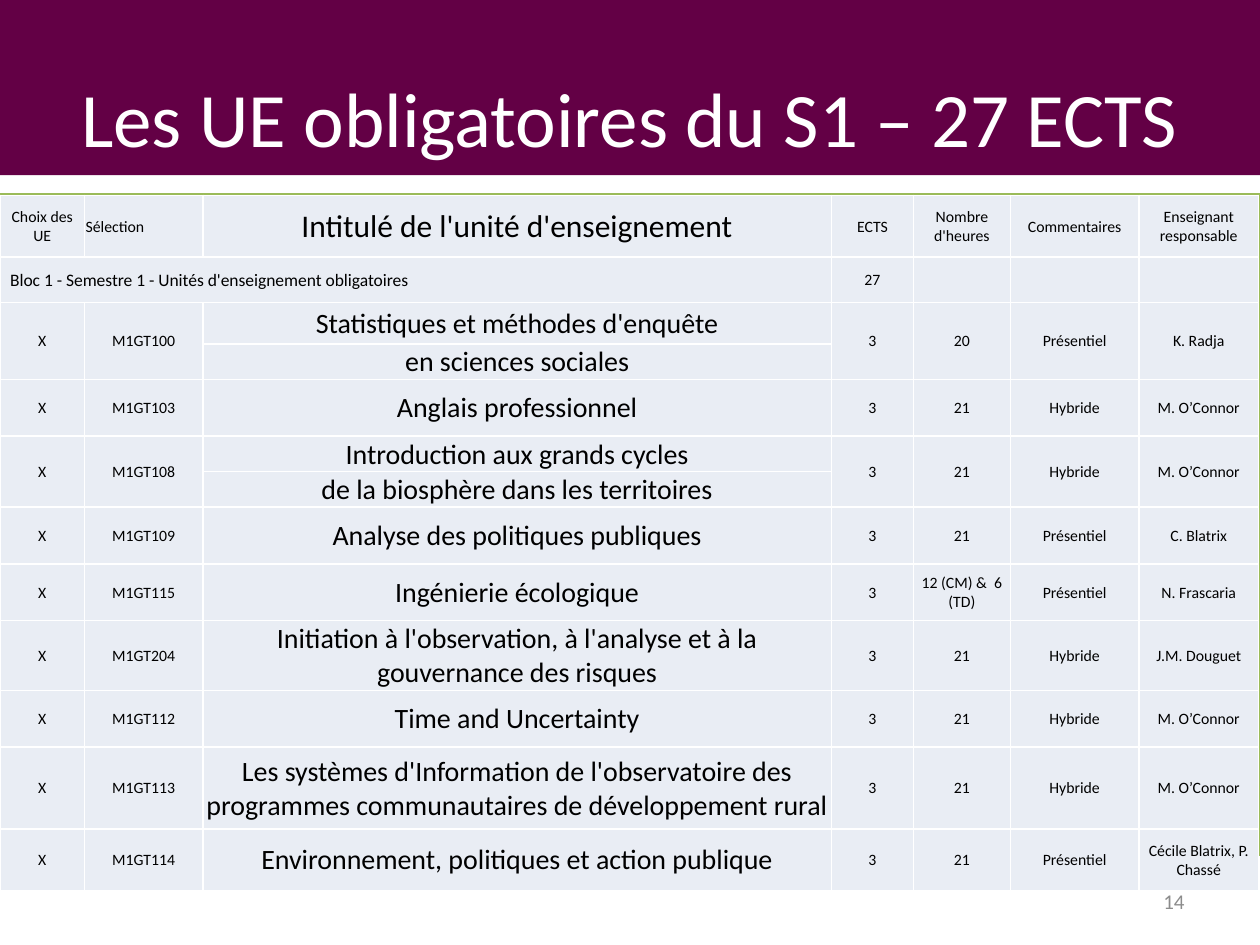
"""Build the slide listing the compulsory first-semester teaching units."""
from lxml.etree import SubElement
from pptx import Presentation
from pptx.dml.color import RGBColor
from pptx.enum.shapes import MSO_SHAPE
from pptx.enum.text import MSO_ANCHOR, PP_ALIGN
from pptx.oxml.ns import qn
from pptx.util import Inches, Pt

COLORS = {"banner": "630045", "green": "9BBB59", "cell": "E9EDF4",
          "white": "FFFFFF", "black": "000000", "number": "8C8C8C"}
FONT = "Calibri"
COLUMN_WIDTHS = [0.67, 0.94, 4.99, 0.65, 0.77, 1.02, 0.95]
ROW_HEIGHTS = [0.49, 0.36, 0.33, 0.22, 0.45, 0.22, 0.22,
               0.45, 0.45, 0.49, 0.45, 0.65, 0.49]
HEADERS = ["Choix des UE", "Sélection", "Intitulé de l'unité d'enseignement",
           "ECTS", "Nombre d'heures", "Commentaires", "Enseignant responsable"]
BLOCK = "Bloc 1 - Semestre 1 - Unités d'enseignement obligatoires"
COURSES = [
    ("M1GT100", ["Statistiques et méthodes d'enquête", "en sciences sociales"],
     "20", "Présentiel", "K. Radja"),
    ("M1GT103", ["Anglais professionnel"], "21", "Hybride", "M. O’Connor"),
    ("M1GT108", ["Introduction aux grands cycles", "de la biosphère dans les territoires"],
     "21", "Hybride", "M. O’Connor"),
    ("M1GT109", ["Analyse des politiques publiques"], "21", "Présentiel", "C. Blatrix"),
    ("M1GT115", ["Ingénierie écologique"], "12 (CM) &  6 (TD)", "Présentiel", "N. Frascaria"),
    ("M1GT204", ["Initiation à l'observation, à l'analyse et à la gouvernance des risques"],
     "21", "Hybride", "J.M. Douguet"),
    ("M1GT112", ["Time and Uncertainty"], "21", "Hybride", "M. O’Connor"),
    ("M1GT113", ["Les systèmes d'Information de l'observatoire des "
                 "programmes communautaires de développement rural"],
     "21", "Hybride", "M. O’Connor"),
    ("M1GT114", ["Environnement, politiques et action publique"],
     "21", "Présentiel", "Cécile Blatrix, P. Chassé"),
]


def write(text_frame, text, size, color="black", alignment=PP_ALIGN.CENTER):
    paragraph = text_frame.paragraphs[0]
    paragraph.alignment = alignment
    run = paragraph.add_run()
    run.text = text
    run.font.name = FONT
    run.font.size = Pt(size)
    run.font.color.rgb = RGBColor.from_string(COLORS[color])


def format_cell(cell):
    properties = cell._tc.get_or_add_tcPr()
    for side in ("lnL", "lnR", "lnT", "lnB"):
        border = SubElement(properties, qn(f"a:{side}"), w=str(Pt(1)))
        fill = SubElement(border, qn("a:solidFill"))
        SubElement(fill, qn("a:srgbClr"), val=COLORS["white"])
    cell.fill.solid()
    cell.fill.fore_color.rgb = RGBColor.from_string(COLORS["cell"])
    cell.vertical_anchor = MSO_ANCHOR.MIDDLE
    cell.margin_left = cell.margin_right = cell.margin_top = Inches(0.01)
    cell.margin_bottom = 0


presentation = Presentation()
presentation.slide_width = Inches(10)
presentation.slide_height = Inches(7.5)
slide = presentation.slides.add_slide(presentation.slide_layouts[5])

for top, height, color in [(0, 1.39, "banner"), (1.55, 5.23, "green")]:
    shape = slide.shapes.add_shape(MSO_SHAPE.RECTANGLE, 0, Inches(top), Inches(10), Inches(height))
    shape.shadow.inherit = False
    shape.fill.solid()
    shape.fill.fore_color.rgb = RGBColor.from_string(COLORS[color])
    if color == "banner":
        shape.line.fill.background()
    else:
        shape.line.color.rgb = RGBColor.from_string(COLORS[color])
        shape.line.width = Pt(2)

title = slide.shapes.title
slide.shapes.element.append(title.element)
title.left, title.top, title.width, title.height = Inches(0.5), Inches(0.3), Inches(9), Inches(1.25)
title.text_frame.vertical_anchor = MSO_ANCHOR.MIDDLE
write(title.text_frame, "Les UE obligatoires du S1 – 27 ECTS", 44, "white")

table = slide.shapes.add_table(len(ROW_HEIGHTS), len(COLUMN_WIDTHS), 0, Inches(1.55),
                               Inches(sum(COLUMN_WIDTHS)), Inches(sum(ROW_HEIGHTS))).table
for column, width in zip(table.columns, COLUMN_WIDTHS):
    column.width = Inches(width)
for row, height in zip(table.rows, ROW_HEIGHTS):
    row.height = Inches(height)
for cell in table.iter_cells():
    format_cell(cell)

for column, header in enumerate(HEADERS):
    write(table.cell(0, column).text_frame, header, 18 if column == 2 else 9,
          alignment=PP_ALIGN.LEFT if column == 1 else PP_ALIGN.CENTER)

block_cell = table.cell(1, 0)
block_cell.merge(table.cell(1, 2))
block_cell.margin_left = Inches(0.08)
write(block_cell.text_frame, BLOCK, 10, alignment=PP_ALIGN.LEFT)
write(table.cell(1, 3).text_frame, "27", 9)

row = 2
for code, name_lines, hours, mode, teacher in COURSES:
    for offset, line in enumerate(name_lines):
        write(table.cell(row + offset, 2).text_frame, line, 16)
    details = {0: "X", 1: code, 3: "3", 4: hours, 5: mode, 6: teacher}
    for column, text in details.items():
        cell = table.cell(row, column)
        if len(name_lines) > 1:
            cell.merge(table.cell(row + len(name_lines) - 1, column))
        write(cell.text_frame, text, 9)
    row += len(name_lines)

number_box = slide.shapes.add_textbox(Inches(7.17), Inches(6.95), Inches(2.33), Inches(0.4))
number_box.text_frame.word_wrap = True
number_box.text_frame.vertical_anchor = MSO_ANCHOR.MIDDLE
write(number_box.text_frame, "14", 12, "number", PP_ALIGN.RIGHT)

presentation.save("out.pptx")
